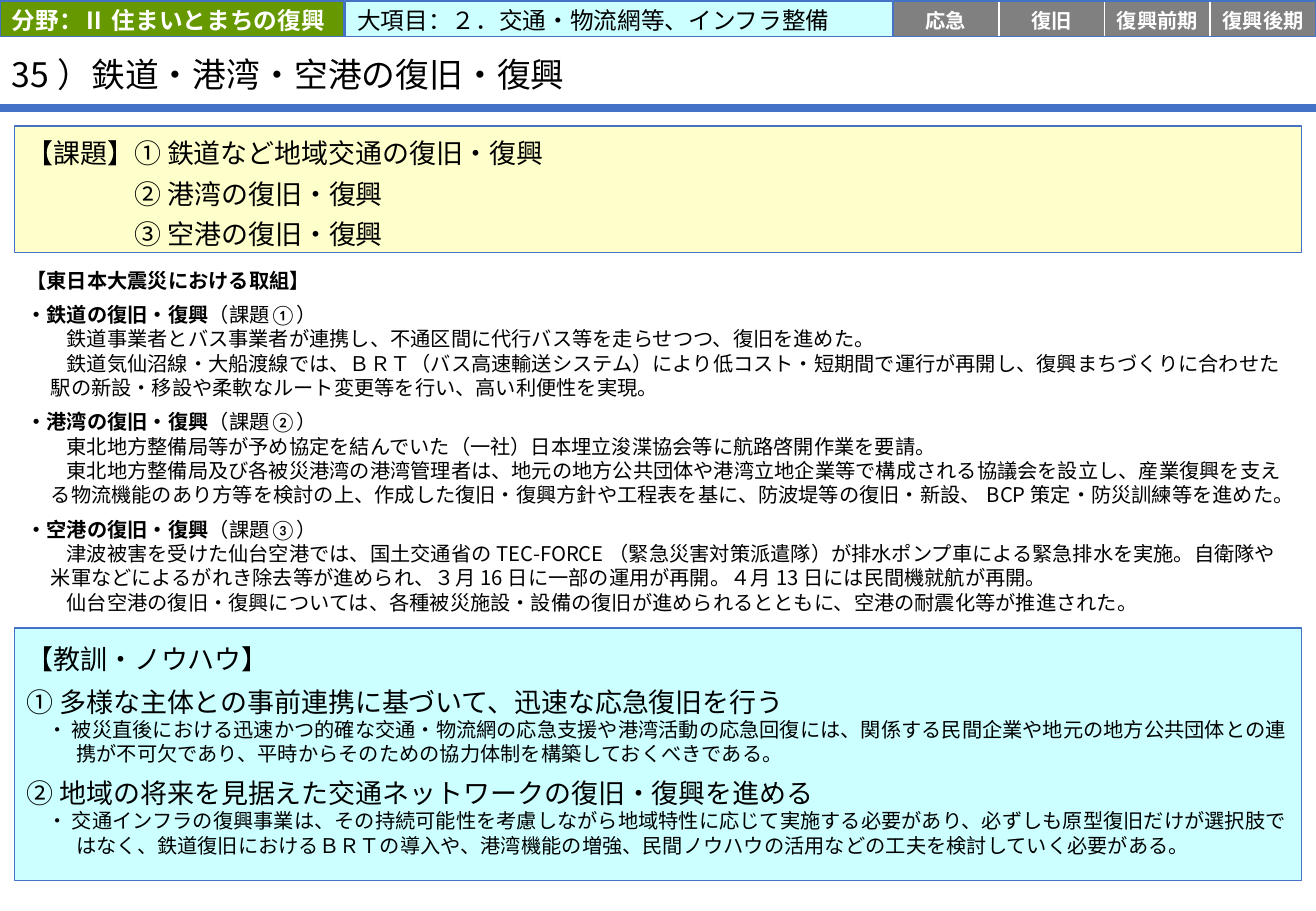
from lxml import etree
from pptx import Presentation, util as u
from pptx.dml.color import RGBColor
from pptx.enum import shapes, text
from pptx.oxml import ns

PX = 9144  # 100 px to the inch
SLIDE_SIZE = (1083, 750)
CALIBRI, NOTO = "Calibri", "Noto Sans CJK JP"
BLUE, BLACK, WHITE = "4472C4", "000000", "FFFFFF"
GREEN, GREY, CYAN, YELLOW = "669900", "808080", "CCFFFF", "FFFFCC"
PHASES = ["応急", "復旧", "復興前期", "復興後期"]
ISSUES = ["【課題】① 鉄道など地域交通の復旧・復興", "② 港湾の復旧・復興", "③ 空港の復旧・復興"]

# heading, heading font, issue tag, tag font, body paragraphs
EFFORTS = [
    ("・鉄道の復旧・復興", CALIBRI, "（課題①）", CALIBRI, [
        "鉄道事業者とバス事業者が連携し、不通区間に代行バス等を走らせつつ、復旧を進めた。",
        "鉄道気仙沼線・大船渡線では、ＢＲＴ（バス高速輸送システム）により低コスト・短期間で運行が再開し、"
        "復興まちづくりに合わせた駅の新設・移設や柔軟なルート変更等を行い、高い利便性を実現。"]),
    ("・港湾の復旧・復興", CALIBRI, "（課題②）", CALIBRI, [
        "東北地方整備局等が予め協定を結んでいた（一社）日本埋立浚渫協会等に航路啓開作業を要請。",
        "東北地方整備局及び各被災港湾の港湾管理者は、地元の地方公共団体や港湾立地企業等で構成される協議会を設立し、"
        "産業復興を支える物流機能のあり方等を検討の上、作成した復旧・復興方針や工程表を基に、"
        "防波堤等の復旧・新設、BCP策定・防災訓練等を進めた。"]),
    ("・空港の復旧・復興", NOTO, "（課題③）", CALIBRI, [
        "津波被害を受けた仙台空港では、国土交通省のTEC-FORCE（緊急災害対策派遣隊）が排水ポンプ車による緊急排水を実施。"
        "自衛隊や米軍などによるがれき除去等が進められ、３月16日に一部の運用が再開。４月13日には民間機就航が再開。",
        "仙台空港の復旧・復興については、各種被災施設・設備の復旧が進められるとともに、空港の耐震化等が推進された。"]),
]
LESSONS = [
    ("① 多様な主体との事前連携に基づいて、迅速な応急復旧を行う",
     "・ 被災直後における迅速かつ的確な交通・物流網の応急支援や港湾活動の応急回復には、関係する民間企業や"
     "地元の地方公共団体との連携が不可欠であり、平時からそのための協力体制を構築しておくべきである。"),
    ("② 地域の将来を見据えた交通ネットワークの復旧・復興を進める",
     "・ 交通インフラの復興事業は、その持続可能性を考慮しながら地域特性に応じて実施する必要があり、"
     "必ずしも原型復旧だけが選択肢ではなく、鉄道復旧におけるＢＲＴの導入や、港湾機能の増強、"
     "民間ノウハウの活用などの工夫を検討していく必要がある。"),
]


def px(length):
    return u.Emu(length * PX)


def colour(value):
    return RGBColor.from_string(value)


def set_frame(shape, insets, anchor):
    frame = shape.text_frame
    frame.word_wrap = True
    frame.vertical_anchor = anchor
    (frame.margin_left, frame.margin_top,
     frame.margin_right, frame.margin_bottom) = map(px, insets)
    return frame


def add_box(slide, box, fill=None, line=None, insets=(10, 5, 10, 5),
            anchor=text.MSO_ANCHOR.MIDDLE):
    shape = slide.shapes.add_shape(shapes.MSO_SHAPE.RECTANGLE, *map(px, box))
    shape.shadow.inherit = False
    if fill:
        shape.fill.solid()
        shape.fill.fore_color.rgb = colour(fill)
    else:
        shape.fill.background()
    if line:
        shape.line.color.rgb = colour(line)
        shape.line.width = u.Pt(1)
    else:
        shape.line.fill.background()
    return set_frame(shape, insets, anchor)


def add_paragraph(frame, left=0, first=0, before=0, spacing=None,
                  align=text.PP_ALIGN.LEFT):
    paragraph = frame.paragraphs[0]
    if paragraph.runs:
        paragraph = frame.add_paragraph()
    paragraph.alignment = align
    paragraph.space_before = u.Pt(before)
    paragraph.line_spacing = spacing
    properties = paragraph._p.get_or_add_pPr()
    properties.set("marL", str(px(left)))
    properties.set("indent", str(px(first)))
    return paragraph


def add_run(paragraph, words, size, font=NOTO, ink=BLACK, bold=False):
    run = paragraph.add_run()
    run.text = words
    run.font.size = u.Pt(size)
    run.font.bold = bold
    run.font.color.rgb = colour(ink)
    run.font.name = font
    east_asian = etree.SubElement(run._r.get_or_add_rPr(), ns.qn("a:ea"))
    east_asian.set("typeface", font)


def add_header(slide, box):
    left, top, width, height = box
    insets = (10, 2, 10, 0)
    # Field and main item
    field = add_box(slide, (left, top, 283, height), GREEN, BLUE, insets)
    add_run(add_paragraph(field), "分野：Ⅱ 住まいとまちの復興", 14, CALIBRI, WHITE, True)
    item = add_box(slide, (left + 284, top, 453, height), CYAN, BLUE, insets)
    add_run(add_paragraph(item), "大項目：２．交通・物流網等、インフラ整備", 14, CALIBRI)
    # Recovery phases, aligned to the right edge
    phase_width = 87
    phases_width = phase_width * len(PHASES)
    phases_left = left + width - phases_width
    for index, name in enumerate(PHASES):
        phase = add_box(slide, (phases_left + index * phase_width, top, phase_width, height),
                        GREY, WHITE, (0, 2, 0, 0))
        add_run(add_paragraph(phase, align=text.PP_ALIGN.CENTER), name, 12, CALIBRI, WHITE, True)
    add_box(slide, (phases_left, top, phases_width, height), line=BLUE)


def add_title(slide, box):
    left, top, width, height = box
    title = slide.shapes.add_textbox(*map(px, box))
    frame = set_frame(title, (10, 4, 10, 0), text.MSO_ANCHOR.MIDDLE)
    add_run(add_paragraph(frame, spacing=0.9), "35）鉄道・港湾・空港の復旧・復興", 20)
    # Rule under the title
    rule_y = px(top + height - 1)
    rule = slide.shapes.add_connector(shapes.MSO_CONNECTOR.STRAIGHT,
                                      px(left), rule_y, px(left + SLIDE_SIZE[0]), rule_y)
    rule.line.color.rgb = colour(BLUE)
    rule.line.width = u.Pt(4.5)
    etree.SubElement(rule._element.spPr, ns.qn("a:effectLst"))


def add_issues(slide, box):
    frame = add_box(slide, box, YELLOW, BLUE, (10, 12, 10, 12))
    for index, issue in enumerate(ISSUES):
        paragraph = add_paragraph(frame, left=89 if index else 0, spacing=u.Pt(24))
        add_run(paragraph, issue, 16)


def add_efforts(slide, box):
    frame = add_box(slide, box, WHITE)
    add_run(add_paragraph(frame), "【東日本大震災における取組】", 12, CALIBRI, bold=True)
    for heading, heading_font, tag, tag_font, bodies in EFFORTS:
        paragraph = add_paragraph(frame, 20, -20, before=6)
        add_run(paragraph, heading, 12, heading_font, bold=True)
        add_run(paragraph, tag, 12, tag_font)
        for body in bodies:
            add_run(add_paragraph(frame, 20, 13), body, 12)


def add_lessons(slide, box):
    frame = add_box(slide, box, CYAN, BLUE, (10, 12, 10, 0), text.MSO_ANCHOR.TOP)
    add_run(add_paragraph(frame), "【教訓・ノウハウ】", 16)
    for heading, body in LESSONS:
        add_run(add_paragraph(frame, before=6), heading, 16)
        add_run(add_paragraph(frame, 41, -24), body, 12)


def main():
    presentation = Presentation()
    presentation.slide_width, presentation.slide_height = map(px, SLIDE_SIZE)
    slide = presentation.slides.add_slide(presentation.slide_layouts[6])
    add_efforts(slide, (12, 217, 1059, 292))
    add_title(slide, (0, 32, 948, 58))
    add_header(slide, (0, 1, SLIDE_SIZE[0], 29))
    add_issues(slide, (12, 104, 1059, 104))
    add_lessons(slide, (12, 517, 1059, 208))
    presentation.save("out.pptx")


if __name__ == "__main__":
    main()
